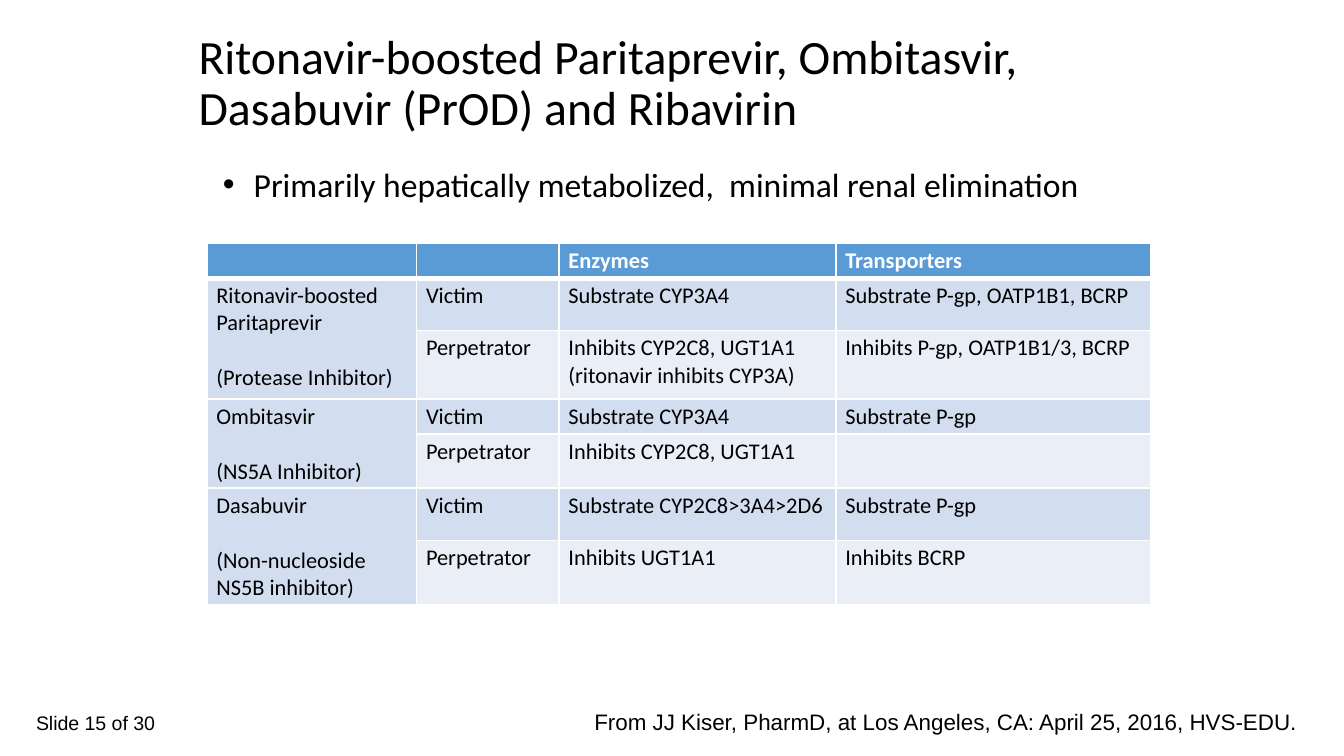
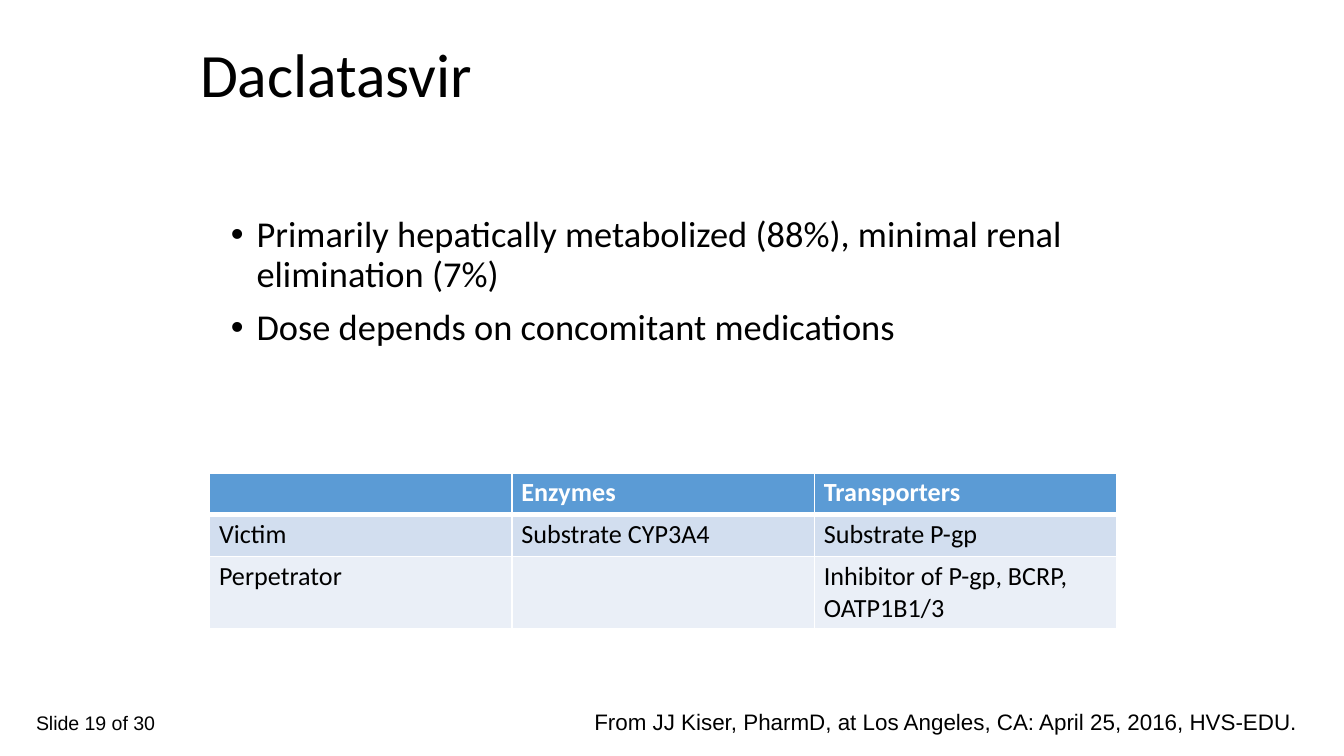
from dataclasses import dataclass

from lxml import etree
from pptx import Presentation
from pptx.dml.color import RGBColor
from pptx.enum.text import MSO_ANCHOR, MSO_AUTO_SIZE, PP_ALIGN
from pptx.oxml.ns import qn
from pptx.util import Inches, Pt

MIDDLE = MSO_ANCHOR.MIDDLE
GROW = MSO_AUTO_SIZE.SHAPE_TO_FIT_TEXT
FIXED = MSO_AUTO_SIZE.NONE
RIGHT = PP_ALIGN.RIGHT


@dataclass(frozen=True)
class Theme:
    text: str = "000000"
    white: str = "FFFFFF"
    header: str = "5B9BD5"
    bands: tuple = ("D2DEEF", "EAEFF7")
    font: str = "Calibri"
    footer_font: str = "Arial"
    number_size: float = 10.5
    credit_size: float = 12
    thin: float = 1
    thick: float = 3
    line_spacing: float = 0.9


THEME = Theme()

# Content: boxes are left, top, width, height in inches
SLIDE_COUNT = 30
CREDIT = "From JJ Kiser, PharmD, at Los Angeles, CA: April 25, 2016, HVS-EDU. "

# In table rows, None continues the cell above
SLIDES = [
    {
        "number": 15,
        "title": "Ritonavir-boosted Paritaprevir, Ombitasvir, Dasabuvir (PrOD) and Ribavirin",
        "title_box": (1.38, 0.28, 7.5, 0.7),
        "title_size": 25.6,
        "bullets": ["Primarily hepatically metabolized,  minimal renal elimination"],
        "bullet_box": (1.56, 1.17, 7, 0.4),
        "bullet_style": {"size": 18, "indent": 0.23, "auto_size": GROW},
        "table_at": (1.54, 1.81),
        "table_size": 12,
        "columns": [1.56, 1.06, 2.06, 2.34],
        "heights": [0.23, 0.39, 0.51, 0.23, 0.35, 0.39, 0.36],
        "rows": [
            ["", "", "Enzymes", "Transporters"],
            ["Ritonavir-boosted Paritaprevir\n(Protease Inhibitor)", "Victim",
             "Substrate CYP3A4", "Substrate P-gp, OATP1B1, BCRP"],
            [None, "Perpetrator", "Inhibits CYP2C8, UGT1A1 (ritonavir inhibits CYP3A)",
             "Inhibits P-gp, OATP1B1/3, BCRP"],
            ["Ombitasvir\n(NS5A Inhibitor)", "Victim", "Substrate CYP3A4", "Substrate P-gp"],
            [None, "Perpetrator", "Inhibits CYP2C8, UGT1A1", ""],
            ["Dasabuvir\n(Non-nucleoside NS5B inhibitor)", "Victim",
             "Substrate CYP2C8>3A4>2D6", "Substrate P-gp"],
            [None, "Perpetrator", "Inhibits UGT1A1", "Inhibits BCRP"],
        ],
    },
    {
        "number": 19,
        "title": "Daclatasvir",
        "title_box": (1.39, 0.23, 6.75, 0.7),
        "title_size": 33,
        "bullets": [
            "Primarily hepatically metabolized (88%), minimal renal elimination (7%)",
            "Dose depends on concomitant medications",
        ],
        "bullet_box": (1.62, 1.56, 6.75, 2.78),
        "bullet_style": {"size": 19.5, "indent": 0.19, "spacing": THEME.line_spacing,
                         "space_before": 7.5},
        "table_at": (1.56, 3.52),
        "table_size": 14,
        "columns": [2.25] * 3,
        "heights": [0.31, 0.31, 0.54],
        "rows": [
            ["", "Enzymes", "Transporters"],
            ["Victim", "Substrate CYP3A4", "Substrate P-gp"],
            ["Perpetrator", "", "Inhibitor of P-gp, BCRP, OATP1B1/3"],
        ],
    },
]


# Text
def format_runs(paragraph, size, font=THEME.font, color=THEME.text, bold=False):
    for run in paragraph.runs:
        run.font.size = Pt(size)
        run.font.name = font
        run.font.color.rgb = RGBColor.from_string(color)
        run.font.bold = bold


def add_bullet(paragraph, indent):
    properties = paragraph._p.get_or_add_pPr()
    properties.set("marL", str(Inches(indent)))
    properties.set("indent", str(-Inches(indent)))
    etree.SubElement(properties, qn("a:buFont"), typeface="Arial")
    etree.SubElement(properties, qn("a:buChar"), char="•")


def add_text(slide, box, lines, size, font=THEME.font, align=None, anchor=None,
             auto_size=FIXED, spacing=None, space_before=None, indent=None):
    shape = slide.shapes.add_textbox(*map(Inches, box))
    frame = shape.text_frame
    frame.word_wrap = True
    frame.auto_size = auto_size
    frame.vertical_anchor = anchor
    frame.text = "\n".join(lines)
    for paragraph in frame.paragraphs:
        paragraph.alignment = align
        paragraph.line_spacing = spacing
        if space_before:
            paragraph.space_before = Pt(space_before)
        if indent:
            add_bullet(paragraph, indent)
        format_runs(paragraph, size, font)


# Tables
def set_borders(cell, top, bottom):
    properties = cell._tc.get_or_add_tcPr()
    widths = {"lnL": THEME.thin, "lnR": THEME.thin, "lnT": top, "lnB": bottom}
    for side, width in widths.items():
        line = etree.SubElement(properties, qn(f"a:{side}"), w=str(Pt(width)))
        fill = etree.SubElement(line, qn("a:solidFill"))
        etree.SubElement(fill, qn("a:srgbClr"), val=THEME.white)


def fill_cell(cell, text, row, size):
    cell.margin_left = cell.margin_right = Inches(0.07)
    cell.margin_top = cell.margin_bottom = Inches(0.03)
    set_borders(cell, THEME.thick if row == 1 else THEME.thin,
                THEME.thick if row == 0 else THEME.thin)
    cell.fill.solid()
    color = THEME.bands[(row - 1) % 2] if row else THEME.header
    cell.fill.fore_color.rgb = RGBColor.from_string(color)
    cell.text_frame.text = text or ""
    for index, paragraph in enumerate(cell.text_frame.paragraphs):
        if index:
            paragraph.space_before = Pt(size * 1.22)
        format_runs(paragraph, size, color=THEME.text if row else THEME.white, bold=row == 0)
        # Keeps empty cells from stretching their row
        etree.SubElement(paragraph._p, qn("a:endParaRPr"), sz=str(size * 100))


def add_table(slide, content):
    rows, columns, heights = content["rows"], content["columns"], content["heights"]
    box = (*content["table_at"], sum(columns), sum(heights))
    table = slide.shapes.add_table(len(rows), len(columns), *map(Inches, box)).table
    for column, width in zip(table.columns, columns):
        column.width = Inches(width)
    for row, height in zip(table.rows, heights):
        row.height = Inches(height)
    for row, texts in enumerate(rows):
        for column, text in enumerate(texts):
            cell = table.cell(row, column)
            fill_cell(cell, text, row, content["table_size"])
            if text is None:
                table.cell(row - 1, column).merge(cell)


# Slides
def add_footer(slide, number):
    add_text(slide, (0.17, 5.24, 1.67, 0.28), [f"Slide {number} of {SLIDE_COUNT}"],
             THEME.number_size, THEME.footer_font, auto_size=GROW)
    add_text(slide, (2.55, 5.22, 7.25, 0.3), [CREDIT],
             THEME.credit_size, THEME.footer_font, align=RIGHT, auto_size=GROW)


def main():
    presentation = Presentation()
    # Widescreen, 16:9
    presentation.slide_width = Inches(10)
    presentation.slide_height = Inches(10 * 9 / 16)
    for content in SLIDES:
        slide = presentation.slides.add_slide(presentation.slide_layouts[6])
        add_footer(slide, content["number"])
        add_text(slide, content["title_box"], [content["title"]], content["title_size"],
                 anchor=MIDDLE, spacing=THEME.line_spacing)
        add_text(slide, content["bullet_box"], content["bullets"], **content["bullet_style"])
        add_table(slide, content)
    presentation.save("out.pptx")


if __name__ == "__main__":
    main()
